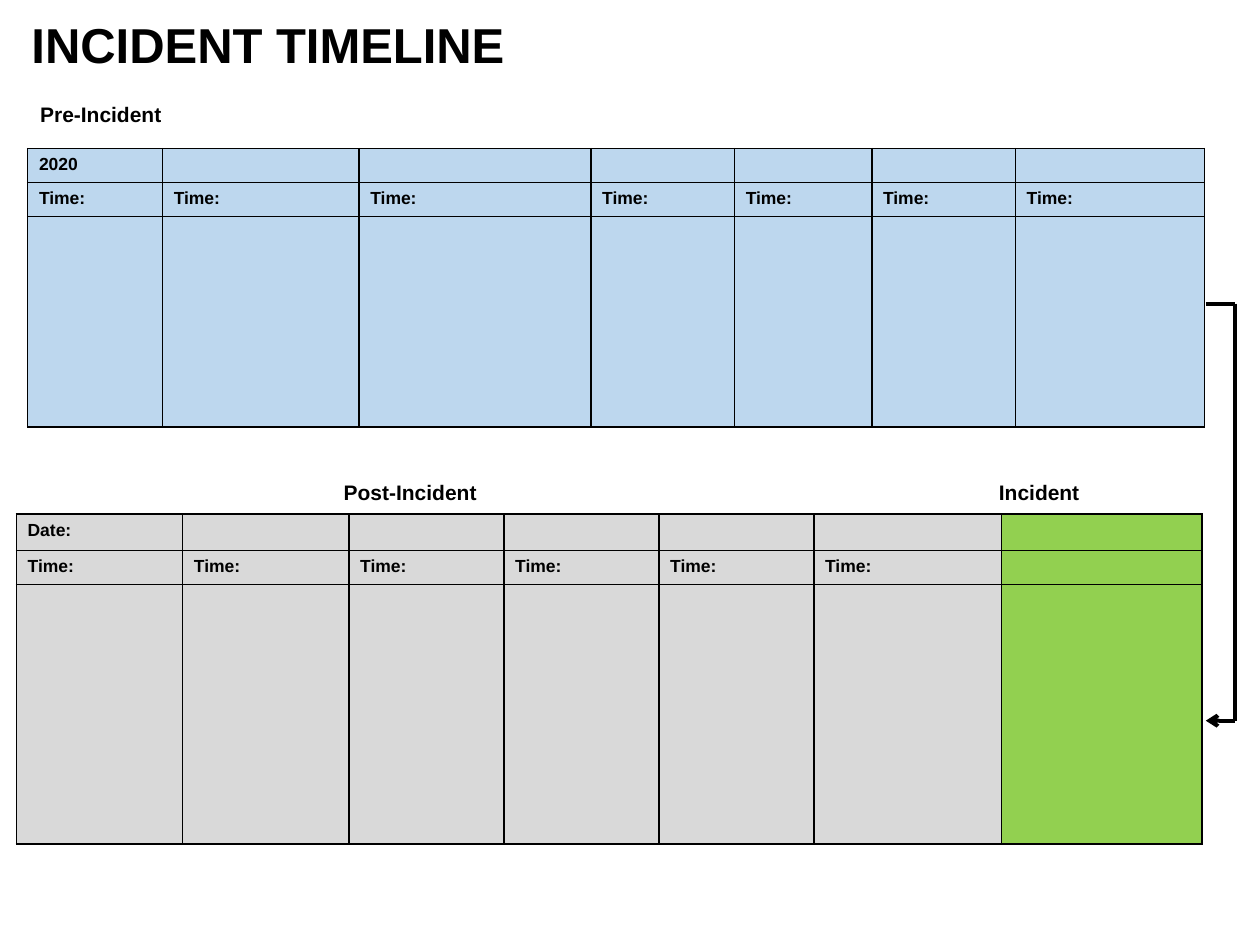
import pptx
import pptx.dml.color
import pptx.enum.shapes
import pptx.enum.text
import pptx.oxml.ns
import pptx.util
from lxml import etree

Inches = pptx.util.Inches
Pt = pptx.util.Pt
qn = pptx.oxml.ns.qn

FONT = "Arial"
BLACK, BLUE, GREY, GREEN = "000000", "BDD7EE", "D9D9D9", "92D050"

TITLE = ("INCIDENT TIMELINE", 0.2, 0.05, 8, 0.65)
HEADINGS = [
    ("Pre-Incident", 0.22, 0.76, 1.21, 0.3),
    ("Incident", 7.83, 3.76, 1.26, 0.3),
    ("Post-Incident", 2.63, 3.76, 1.36, 0.3),
]
TIMELINES = [
    {
        "position": (0.22, 1.18),
        "columns": [1.07, 1.56, 1.84, 1.14, 1.09, 1.14, 1.5],
        "rows": [0.27, 0.27, 1.67],
        "first": "2020",
        "times": 7,
        "fills": [BLUE] * 7,
    },
    {
        "position": (0.13, 4.08),
        "columns": [1.32, 1.32, 1.23, 1.23, 1.23, 1.49, 1.59],
        "rows": [0.29, 0.25, 2.06],
        "first": "Date:",
        "times": 6,
        "fills": [GREY] * 6 + [GREEN],
    },
]
LINK_POINTS = [(9.57, 2.41), (9.8, 2.41), (9.8, 5.72), (9.57, 5.72)]


def color(value):
    return pptx.dml.color.RGBColor.from_string(value)


def format_runs(paragraph, size):
    for run in paragraph.runs:
        run.font.name = FONT
        run.font.size = Pt(size)
        run.font.bold = True
        run.font.color.rgb = color(BLACK)


def add_text(slide, text, left, top, width, height, size):
    shape = slide.shapes.add_textbox(*map(Inches, (left, top, width, height)))
    frame = shape.text_frame
    frame.word_wrap = True
    frame.text = text
    format_runs(frame.paragraphs[0], size)
    return frame


def add_borders(cell):
    properties = cell._tc.get_or_add_tcPr()
    for side in ("lnL", "lnR", "lnT", "lnB"):
        border = etree.SubElement(properties, qn(f"a:{side}"), w=str(Pt(1)))
        fill = etree.SubElement(border, qn("a:solidFill"))
        etree.SubElement(fill, qn("a:srgbClr"), val=BLACK)


def fill_cell(cell, text, fill):
    add_borders(cell)
    cell.fill.solid()
    cell.fill.fore_color.rgb = color(fill)
    cell.margin_left = cell.margin_right = Inches(0.09)
    cell.margin_top = cell.margin_bottom = Inches(0.05)
    paragraph = cell.text_frame.paragraphs[0]
    if text:
        paragraph.text = text
        format_runs(paragraph, 10)
    else:
        etree.SubElement(paragraph._p, qn("a:endParaRPr"), sz="1000")


def add_timeline(slide, timeline):
    columns, rows = timeline["columns"], timeline["rows"]
    count = len(columns)
    left, top = timeline["position"]
    table = slide.shapes.add_table(
        len(rows), count, Inches(left), Inches(top), Inches(sum(columns)), Inches(sum(rows))
    ).table
    table.first_row = table.horz_banding = False
    for column, width in zip(table.columns, columns):
        column.width = Inches(width)
    for row, height in zip(table.rows, rows):
        row.height = Inches(height)
    times = timeline["times"]
    texts = [
        [timeline["first"]] + [""] * (count - 1),
        ["Time:"] * times + [""] * (count - times),
        [""] * count,
    ]
    for row, row_texts in zip(table.rows, texts):
        for cell, text, fill in zip(row.cells, row_texts, timeline["fills"]):
            fill_cell(cell, text, fill)


def add_link(slide, points):
    for start, end in zip(points, points[1:]):
        connector = slide.shapes.add_connector(
            pptx.enum.shapes.MSO_CONNECTOR.STRAIGHT, *map(Inches, start + end)
        )
        connector.line.color.rgb = color(BLACK)
        connector.line.width = Pt(2.25)
        if end == points[-1]:
            etree.SubElement(connector.line._get_or_add_ln(), qn("a:tailEnd"), type="arrow")
        etree.SubElement(connector._element.spPr, qn("a:effectLst"))


def main():
    presentation = pptx.Presentation()
    presentation.slide_width = Inches(10)
    presentation.slide_height = Inches(7.5)
    slide = presentation.slides.add_slide(presentation.slide_layouts[6])

    title = add_text(slide, *TITLE, 28)
    title.vertical_anchor = pptx.enum.text.MSO_ANCHOR.MIDDLE
    title.margin_left = title.margin_right = Inches(0.05)
    title.paragraphs[0].line_spacing = 0.9
    for heading in HEADINGS:
        add_text(slide, *heading, 12)
    for timeline in TIMELINES:
        add_timeline(slide, timeline)
    add_link(slide, LINK_POINTS)
    presentation.save("out.pptx")


if __name__ == "__main__":
    main()
